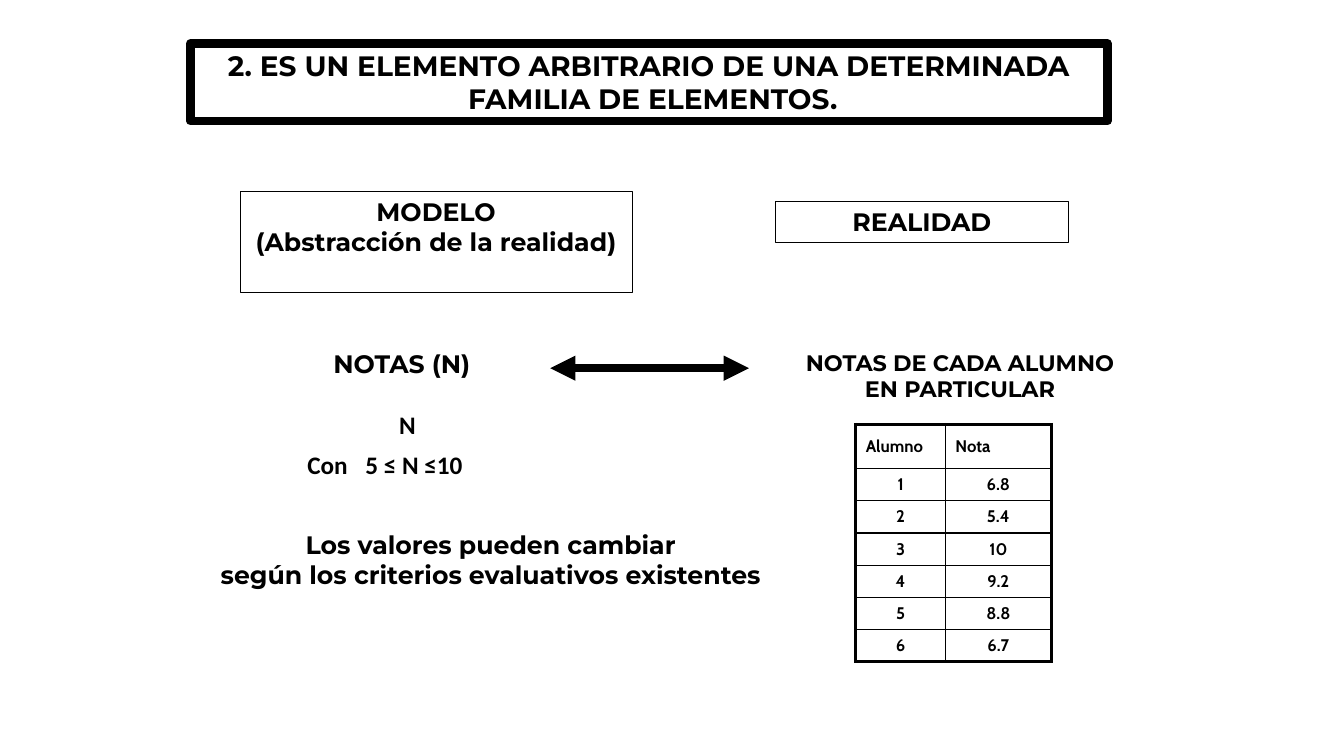
from lxml import etree
from pptx import Presentation
from pptx.dml.color import RGBColor
from pptx.enum.shapes import MSO_CONNECTOR, MSO_SHAPE
from pptx.enum.text import MSO_ANCHOR, MSO_AUTO_SIZE, PP_ALIGN
from pptx.oxml.ns import qn
from pptx.util import Pt

RECTANGLE = MSO_SHAPE.RECTANGLE
STRAIGHT = MSO_CONNECTOR.STRAIGHT
TOP, MIDDLE = MSO_ANCHOR.TOP, MSO_ANCHOR.MIDDLE
LEFT, CENTER = PP_ALIGN.LEFT, PP_ALIGN.CENTER
NO_AUTOFIT = MSO_AUTO_SIZE.NONE

COLORS = {"ink": "000000", "paper": "FFFFFF"}
THIN, THICK = 1, 2.25
GRADES = [
    ("Alumno", "Nota"),
    ("1", "6.8"),
    ("2", "5.4"),
    ("3", "10"),
    ("4", "9.2"),
    ("5", "8.8"),
    ("6", "6.7"),
]


def color(name):
    return RGBColor.from_string(COLORS[name])


def points(values):
    return [Pt(value) for value in values]


def add_span(para, text, size, font):
    span = para.add_run()
    span.text = text
    span.font.size = Pt(size)
    span.font.name = font
    span.font.bold = True
    span.font.color.rgb = color("ink")


def write_lines(frame, lines, size, font, align):
    frame.auto_size = NO_AUTOFIT
    frame.vertical_anchor = TOP
    for index, line in enumerate(lines):
        para = frame.paragraphs[0] if index == 0 else frame.add_paragraph()
        para.alignment = align
        add_span(para, line, size, font)


def add_framed_box(page, place, lines, size, border, fill=None):
    box = page.shapes.add_shape(RECTANGLE, *points(place))
    box.shadow.inherit = False
    if fill:
        box.fill.solid()
        box.fill.fore_color.rgb = color(fill)
    else:
        box.fill.background()
    box.line.color.rgb = color("ink")
    box.line.width = Pt(border)
    box.text_frame.word_wrap = True
    write_lines(box.text_frame, lines, size, "Montserrat", CENTER)


def add_label(page, place, lines, size=18, font="Montserrat", align=CENTER):
    box = page.shapes.add_textbox(*points(place))
    box.text_frame.word_wrap = False
    write_lines(box.text_frame, lines, size, font, align)
    return box


def add_tab_stop(para, position):
    tabs = etree.SubElement(para._p.get_or_add_pPr(), qn("a:tabLst"))
    etree.SubElement(tabs, qn("a:tab"), pos=str(Pt(position)), algn="l")


def add_double_arrow(page, start, end, width):
    arrow = page.shapes.add_connector(STRAIGHT, *points(start + end))
    arrow.line.color.rgb = color("ink")
    arrow.line.width = Pt(width)
    line = arrow.line._get_or_add_ln()
    for tip in ("a:headEnd", "a:tailEnd"):
        etree.SubElement(line, qn(tip), type="triangle")
    etree.SubElement(arrow._element.spPr, qn("a:effectLst"))


def set_borders(cell, widths):
    properties = cell._tc.get_or_add_tcPr()
    for index, (side, width) in enumerate(zip("LRTB", widths)):
        line = etree.Element(qn(f"a:ln{side}"), w=str(Pt(width)))
        fill = etree.SubElement(line, qn("a:solidFill"))
        etree.SubElement(fill, qn("a:srgbClr"), val=COLORS["ink"])
        properties.insert(index, line)


def add_grade_table(page, left, top, column_widths, header_height, row_height):
    heights = [header_height] + [row_height] * (len(GRADES) - 1)
    size = (sum(column_widths), sum(heights))
    table = page.shapes.add_table(
        len(GRADES), len(column_widths), *points((left, top) + size)
    ).table
    table.first_row = table.horz_banding = False
    for column, width in zip(table.columns, column_widths):
        column.width = Pt(width)
    last_row, last_column = len(GRADES) - 1, len(column_widths) - 1
    for r, (row, height) in enumerate(zip(table.rows, heights)):
        row.height = Pt(height)
        for c, cell in enumerate(row.cells):
            cell.fill.background()
            cell.vertical_anchor = MIDDLE
            cell.margin_top = cell.margin_bottom = Pt(2)
            para = cell.text_frame.paragraphs[0]
            para.alignment = LEFT if r == 0 else CENTER
            para.space_before = Pt(2.4)
            add_span(para, GRADES[r][c], 12, "Cabin")
            # Thick outer frame, thin inner rules
            outer = (c == 0, c == last_column, r == 0, r == last_row)
            set_borders(cell, [THICK if edge else THIN for edge in outer])


def main():
    deck = Presentation()
    deck.slide_width, deck.slide_height = Pt(960), Pt(540)
    page = deck.slides.add_slide(deck.slide_layouts[6])

    # Title
    title = [
        "2. ES UN ELEMENTO ARBITRARIO DE UNA DETERMINADA",
        " FAMILIA DE ELEMENTOS.",
    ]
    add_framed_box(page, (136, 31, 655, 55.5), title, 20, 6, "paper")

    # Headings of the two sides
    model = ["MODELO", "(Abstracción de la realidad)"]
    add_framed_box(page, (171.5, 136.8, 280, 72.5), model, 18, 0.75)
    add_framed_box(page, (553.7, 144, 209.5, 29), ["REALIDAD"], 18, 0.75)

    # Model side
    add_label(page, (231, 245, 119.5, 29), ["NOTAS (N)"], align=LEFT)
    add_label(page, (278, 289, 26.5, 29), ["N"], font="Calibri", align=LEFT)
    limits = add_label(
        page, (212.4, 317.5, 130.3, 29), ["Con\t5 ≤ N ≤10"], font="Calibri", align=LEFT
    )
    add_tab_stop(limits.text_frame.paragraphs[0], 41.5)
    remark = ["Los valores pueden cambiar", "según los criterios evaluativos existentes"]
    add_label(page, (137.5, 374.4, 426, 50.4), remark)

    # Link between model and reality
    add_double_arrow(page, (393, 263), (535, 263), 6)

    # Reality side
    pupils = ["NOTAS DE CADA ALUMNO", "EN PARTICULAR"]
    add_label(page, (563, 245.5, 245.5, 46), pupils, size=16)
    add_grade_table(page, 611.3, 303, (64, 75.7), 31.7, 23)

    deck.save("out.pptx")


if __name__ == "__main__":
    main()
